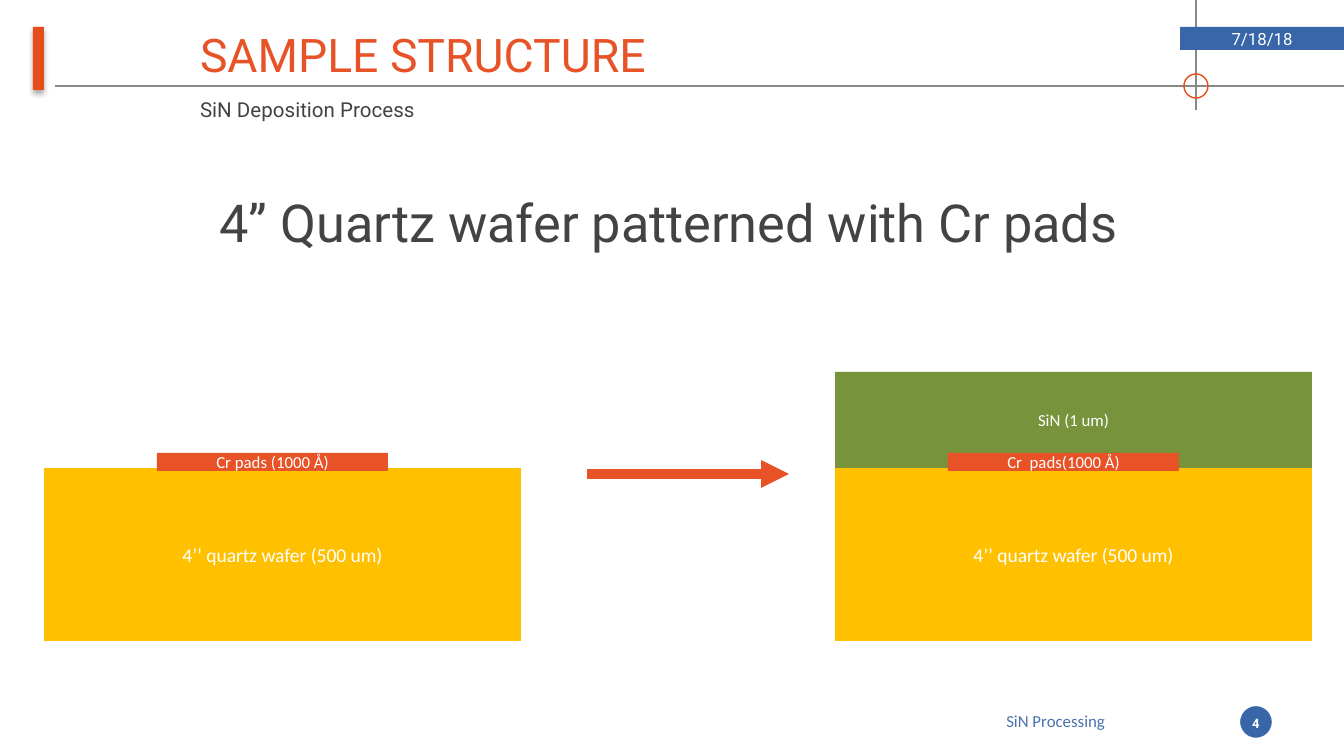
from lxml import etree
from pptx import Presentation
from pptx.dml.color import RGBColor
from pptx.enum.shapes import MSO_CONNECTOR as Link, MSO_SHAPE as Shape
from pptx.enum.text import MSO_ANCHOR as Anchor, MSO_AUTO_SIZE as Fit, PP_ALIGN as Align
from pptx.oxml import parse_xml
from pptx.oxml.ns import nsdecls, qn
from pptx.util import Emu, Pt

SCALE = 914400 / 134.4  # EMU in one px
WIDTH, HEIGHT = 1344, 756
ORANGE, ACCENT, BLUE, GREY = "E74D18", "E75326", "3866A8", "888886"
GREEN, GOLD, INK, WHITE = "77933C", "FFC000", "434342", "FFFFFF"
LAYER_WIDTH, WAFER_TOP, WAFER_HEIGHT = 477, 468, 173
PAD_OFFSET, PAD_TOP, PAD_WIDTH, PAD_HEIGHT = 113, 453, 231, 18


def px(length):
    return Emu(round(length * SCALE))


def colour(value):
    return RGBColor.from_string(value)


def write(shape, text, size, ink, face="Calibri", bold=False, align=Align.CENTER,
          anchor=Anchor.MIDDLE, inset=(0, 0), spacing=None):
    frame = shape.text_frame
    across, down = map(px, inset)
    frame_format = {
        "word_wrap": True, "auto_size": Fit.NONE, "vertical_anchor": anchor,
        "margin_left": across, "margin_right": across,
        "margin_top": down, "margin_bottom": down,
    }
    for name, value in frame_format.items():
        setattr(frame, name, value)
    para = frame.paragraphs[0]
    para.alignment, para.line_spacing = align, spacing
    span = para.add_run()
    span.text = text
    for name, value in {"size": Pt(size), "name": face, "bold": bold}.items():
        setattr(span.font, name, value)
    span.font.color.rgb = colour(ink)


def add_box(page, kind, place, fill=None, line=None, weight=0.75):
    box = page.shapes.add_shape(kind, *map(px, place))
    box.shadow.inherit = False
    if fill:
        box.fill.solid()
        box.fill.fore_color.rgb = colour(fill)
    else:
        box.fill.background()
    if line:
        box.line.color.rgb = colour(line)
        box.line.width = Pt(weight)
    else:
        box.line.fill.background()
    return box


def add_label(page, place, text, size, ink, **look):
    write(page.shapes.add_textbox(*map(px, place)), text, size, ink, **look)


def add_line(page, start, end, ink, weight, arrow=False):
    line = page.shapes.add_connector(Link.STRAIGHT, *map(px, start + end))
    line.line.color.rgb = colour(ink)
    line.line.width = Pt(weight)
    if arrow:
        etree.SubElement(line.line._get_or_add_ln(), qn("a:tailEnd"), type="triangle")
    etree.SubElement(line._element.spPr, qn("a:effectLst"))


def add_shadow(shape):
    effects = shape._element.spPr.find(qn("a:effectLst"))
    effects.append(parse_xml(
        f'<a:outerShdw {nsdecls("a")} blurRad="{Pt(3.1)}" dist="{Pt(1.8)}" dir="5400000" '
        'rotWithShape="0"><a:srgbClr val="000000"><a:alpha val="35000"/></a:srgbClr>'
        '</a:outerShdw>'))


def add_wafer(page, left, pad_text):
    wafer = add_box(page, Shape.RECTANGLE,
                    (left, WAFER_TOP, LAYER_WIDTH, WAFER_HEIGHT), GOLD)
    write(wafer, "4’’ quartz wafer (500 um)", 10.5, WHITE)
    pad = add_box(page, Shape.RECTANGLE,
                  (left + PAD_OFFSET, PAD_TOP, PAD_WIDTH, PAD_HEIGHT), ACCENT)
    write(pad, pad_text, 9, WHITE)


def add_frame(page):
    # Cross lines with a ring, and the accent bar
    add_line(page, (55, 86), (WIDTH, 86), GREY, 0.75)
    add_line(page, (1196, 110), (1196, 0), GREY, 0.75)
    add_box(page, Shape.OVAL, (1184, 74, 24, 24), line=ORANGE)
    add_shadow(add_box(page, Shape.RECTANGLE, (33, 27, 11, 63), ORANGE))

    # Date, footer and page number
    date = add_box(page, Shape.RECTANGLE, (1180, 27, 164, 23), BLUE)
    write(date, "7/18/18", 9, WHITE, face="Roboto")
    footer = add_box(page, Shape.RECTANGLE, (915, 704, 281, 34), WHITE)
    write(footer, "SiN Processing", 9, "4972AB")
    add_box(page, Shape.OVAL, (1238, 704, 36, 36), BLUE, WHITE, 2.25)
    add_label(page, (1234, 704, 44, 38), "4", 7, WHITE, face="Roboto", bold=True)


def add_headings(page):
    title = page.shapes.title
    place = {"left": 187, "top": 19, "width": 993, "height": 70}
    for name, value in place.items():
        setattr(title, name, px(value))
    write(title, "SAMPLE STRUCTURE", 24.8, ACCENT, face="Roboto",
          align=Align.LEFT, inset=(13, 7))
    add_label(page, (187, 90, 371, 38), "SiN Deposition Process", 11, INK, face="Roboto",
              align=Align.LEFT, anchor=Anchor.TOP, inset=(13, 7))
    add_label(page, (-7, 177, 1351, 78), "4” Quartz wafer patterned with Cr pads", 28, INK,
              face="Roboto", anchor=Anchor.TOP, inset=(13, 7), spacing=1.1)


def add_process(page):
    before, after = 44, 835
    nitride = add_box(page, Shape.RECTANGLE, (after, 372, LAYER_WIDTH, 96), GREEN)
    write(nitride, "SiN (1 um)", 9, WHITE)
    add_line(page, (587, 474), (789, 474), ACCENT, 5, arrow=True)
    add_wafer(page, before, "Cr pads (1000 Å)")
    add_wafer(page, after, "Cr  pads(1000 Å)")


def main():
    deck = Presentation()
    deck.slide_width, deck.slide_height = px(WIDTH), px(HEIGHT)
    page = deck.slides.add_slide(deck.slide_layouts[5])
    add_frame(page)
    add_headings(page)
    add_process(page)
    deck.save("out.pptx")


if __name__ == "__main__":
    main()
